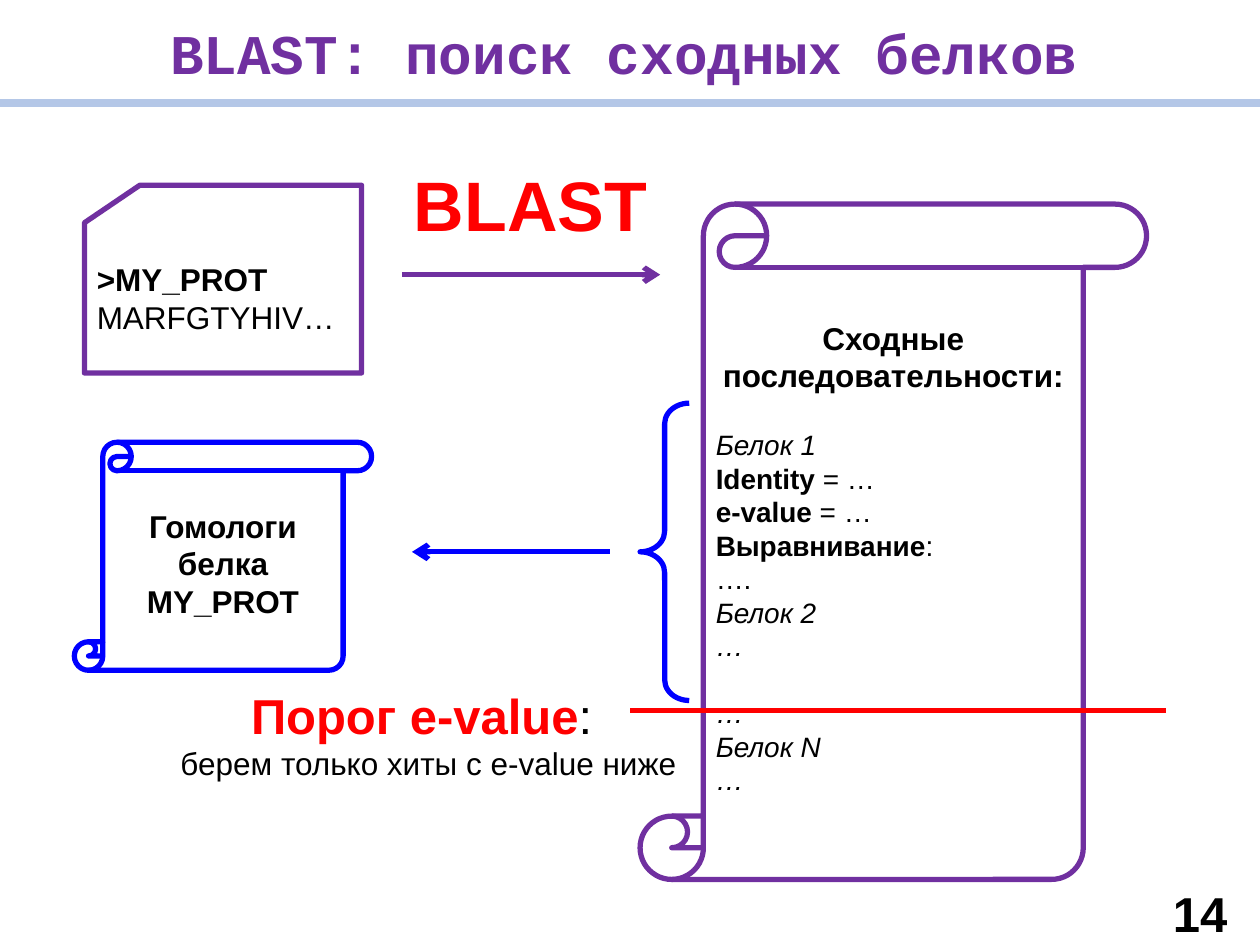
from dataclasses import dataclass

from lxml import etree
from pptx import Presentation
from pptx import util as u
from pptx.dml.color import RGBColor
from pptx.enum import shapes, text
from pptx.oxml import ns

SHAPE = shapes.MSO_SHAPE
ALIGN = text.PP_ALIGN
MIDDLE = text.MSO_ANCHOR.MIDDLE


@dataclass(frozen=True)
class Theme:
    font: str = "Arial"
    title_font: str = "Courier New"
    purple: str = "7030A0"
    blue: str = "0000FF"
    red: str = "FF0000"
    black: str = "000000"
    rule: str = "B4C7E7"
    list_size: float = 16
    body: float = 18
    large: float = 28
    title: float = 32
    label: float = 40
    stroke: float = 3
    rule_width: float = 4.75


T = Theme()


@dataclass(frozen=True)
class Box:
    x: float
    y: float
    w: float
    h: float

    def inner(self, dx, dy, w, h):
        """Box of the given size, offset from this box's corner."""
        return Box(self.x + dx, self.y + dy, w, h)

    def emu(self):
        return [u.Inches(v) for v in (self.x, self.y, self.w, self.h)]


def run(words, size=T.body, color=T.black, name=T.font, **style):
    return words, color, dict(size=u.Pt(size), name=name, **style)


def write(tf, paragraphs, **frame):
    """Fill a frame with (runs, paragraph format) pairs."""
    for key, value in dict(word_wrap=True, **frame).items():
        setattr(tf, key, value)
    for i, (runs, layout) in enumerate(paragraphs):
        p = tf.paragraphs[0] if i == 0 else tf.add_paragraph()
        for key, value in dict(dict(alignment=ALIGN.LEFT), **layout).items():
            setattr(p, key, value)
        for words, color, style in runs:
            r = p.add_run()
            r.text = words
            r.font.color.rgb = RGBColor.from_string(color)
            for key, value in style.items():
                setattr(r.font, key, value)


def centered(*runs, **layout):
    return list(runs), dict(alignment=ALIGN.CENTER, **layout)


def add_text(s, box, paragraphs, **frame):
    write(s.shapes.add_textbox(*box.emu()).text_frame, paragraphs, **frame)


def add_outline(s, kind, box, color, paragraphs=()):
    sp = s.shapes.add_shape(kind, *box.emu())
    sp.shadow.inherit = False
    sp.fill.background()
    sp.line.color.rgb = RGBColor.from_string(color)
    sp.line.width = u.Pt(T.stroke)
    write(sp.text_frame, paragraphs, vertical_anchor=MIDDLE)
    return sp


def add_line(s, x1, x2, y, color, width=T.stroke, arrow=False):
    """Horizontal line from x1 to x2, optionally with an arrowhead at x2."""
    line = s.shapes.add_connector(shapes.MSO_CONNECTOR.STRAIGHT,
                                  *[u.Inches(v) for v in (x1, y, x2, y)])
    line.line.color.rgb = RGBColor.from_string(color)
    line.line.width = u.Pt(width)
    properties = line._element.spPr
    if arrow:
        etree.SubElement(properties.find(ns.qn("a:ln")), ns.qn("a:tailEnd"), type="arrow")
    etree.SubElement(properties, ns.qn("a:effectLst"))


def header(s, box):
    add_text(s, box.inner(0, 0.11, 9.91, 0.56),
             [centered(run("BLAST: поиск сходных белков", T.title, T.purple,
                           T.title_font, bold=True))],
             vertical_anchor=MIDDLE, margin_left=0, margin_right=0,
             margin_top=u.Inches(0.04), margin_bottom=0)
    add_line(s, box.x + box.w, box.x, box.y + box.h, T.rule, T.rule_width)


def page_number(s, box, number):
    add_text(s, box, [centered(run(number, T.large, bold=True),
                               space_before=u.Pt(0.2 * T.large))])


def results(s, box):
    def entry(words, tail="", **style):
        runs = [run(words, T.list_size, **style)]
        return runs + [run(tail, T.list_size)] if tail else runs

    gap = dict(space_before=u.Pt(19))
    add_outline(s, SHAPE.VERTICAL_SCROLL, box, T.purple, [
        centered(run("Сходные последовательности:", bold=True)),
        (entry("Белок 1", italic=True), gap),
        (entry("Identity", " = …", bold=True), {}),
        (entry("e-value", " = …", bold=True), {}),
        (entry("Выравнивание", ":", bold=True), {}),
        (entry("…."), {}),
        (entry("Белок 2", italic=True), {}),
        (entry("…", italic=True), {}),
        (entry("…", italic=True), gap),
        (entry("Белок N", italic=True), {}),
        (entry("…", italic=True), {}),
    ])


def query(s, box):
    add_outline(s, SHAPE.FLOWCHART_CARD, box, T.purple, [
        ([run(">MY_PROT", bold=True)], {}),
        ([run("MARFGTYHIV…")], {}),
    ])


def threshold(s, box):
    """Cut-off line through the results, with its caption at the left."""
    add_line(s, box.x + 4.06, box.x + box.w, box.y + 0.25, T.red)
    add_text(s, box.inner(0, 0, 4.92, box.h), [
        centered(run("Порог e-value", T.large, T.red, bold=True), run(": ", T.large)),
        centered(run("берем только хиты с e-value ниже")),
    ])


def search_step(s, box):
    add_line(s, box.x + 0.16, box.x + 2.21, box.y + box.h, T.purple, arrow=True)
    add_text(s, box.inner(0, 0, box.w, 0.77),
             [centered(run("BLAST", T.label, T.red, bold=True))])


def selection_step(s, box):
    """Brace around the accepted hits and an arrow pointing left from it."""
    brace_width = 0.39
    brace = add_outline(s, SHAPE.LEFT_BRACE,
                        box.inner(box.w - brace_width, 0, brace_width, box.h), T.blue)
    brace.adjustments[0] = 0.42
    add_line(s, box.x + 1.57, box.x, box.y + box.h / 2, T.blue, arrow=True)


def homologs(s, box):
    add_outline(s, SHAPE.VERTICAL_SCROLL, box, T.blue,
                [centered(run("Гомологи белка MY_PROT", bold=True))])


def main():
    prs = Presentation()
    prs.slide_width, prs.slide_height = u.Inches(10), u.Inches(7.5)
    s = prs.slides.add_slide(prs.slide_layouts[6])
    header(s, Box(0, 0, 10, 0.82))
    page_number(s, Box(9.13, 6.96, 0.79, 0.54), "14")
    results(s, Box(5.08, 1.62, 4.02, 5.36))
    query(s, Box(0.67, 1.47, 2.2, 1.49))
    threshold(s, Box(0.94, 5.39, 8.31, 0.88))
    search_step(s, Box(3.03, 1.23, 2.36, 0.95))
    selection_step(s, Box(3.27, 3.2, 2.2, 2.36))
    homologs(s, Box(0.59, 3.51, 2.36, 1.81))
    prs.save("out.pptx")


if __name__ == "__main__":
    main()
